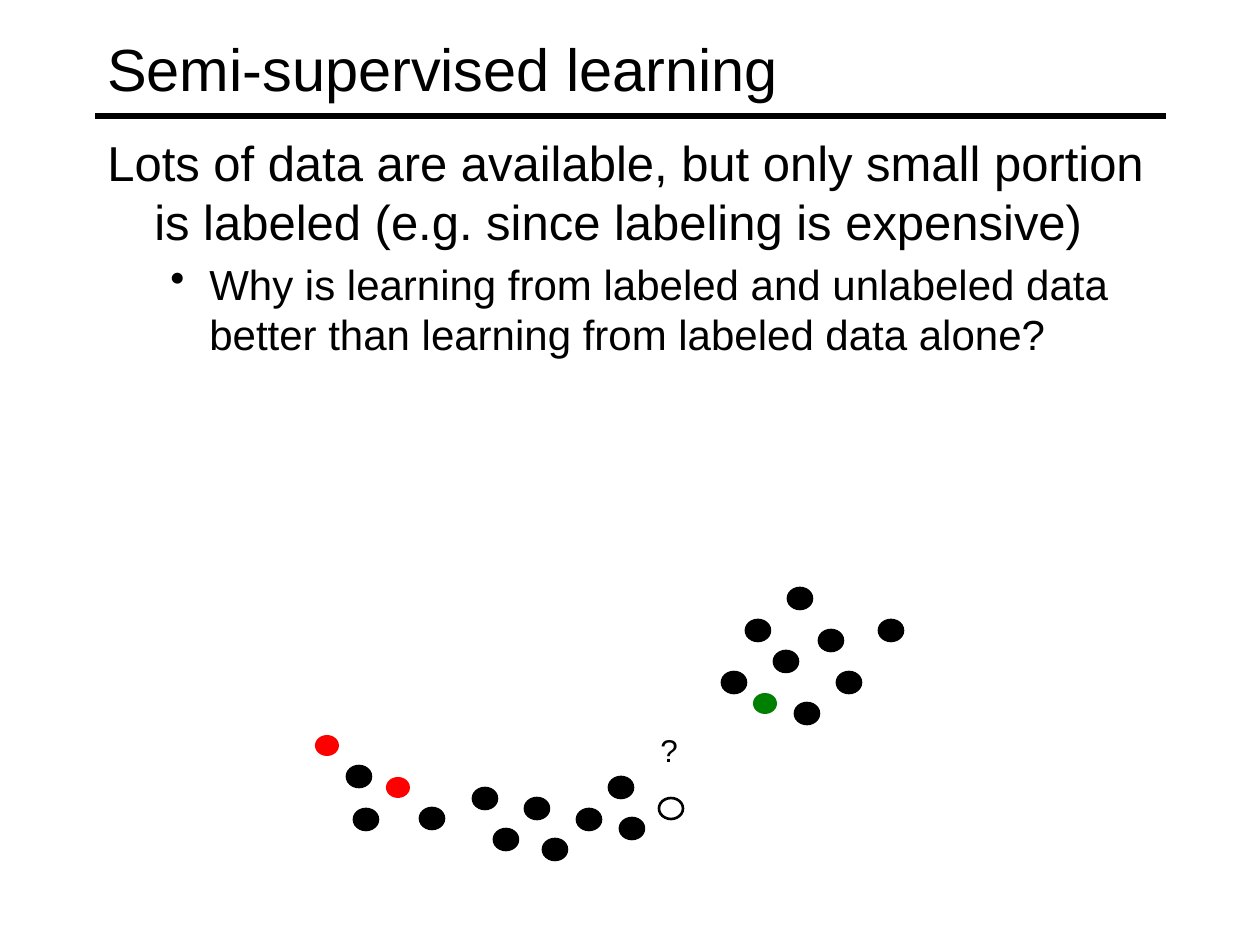
from dataclasses import dataclass

from lxml import etree
from pptx import Presentation, util as u
from pptx.dml.color import RGBColor
from pptx.enum import shapes, text
from pptx.oxml import ns

EMU_PER_PX = 914400 / 126
FONT = "Arial"
BLACK = RGBColor(0, 0, 0)
RED = RGBColor(255, 0, 0)
GREEN = RGBColor(0, 128, 0)
DOT_WIDTH, DOT_HEIGHT = 24, 21


@dataclass(frozen=True)
class Dot:
    left: int
    top: int
    fill: RGBColor | None = BLACK
    outlined: bool = True


@dataclass(frozen=True)
class TextBlock:
    left: int
    top: int
    width: int
    height: int
    wrap: bool = True
    anchor: text.MSO_ANCHOR = text.MSO_ANCHOR.TOP


@dataclass(frozen=True)
class Line:
    wording: str
    size: int
    margin: int = 0
    indent: int = 0
    level: int = 0
    space_before: float = 0
    bullet: str = ""


TITLE = TextBlock(95, 10, 1071, 116, anchor=text.MSO_ANCHOR.MIDDLE)
BODY = TextBlock(95, 126, 1071, 725)
QUESTION = TextBlock(648, 725, 55, 72, wrap=False)
BODY_LINES = [
    Line("Lots of data are available, but only small portion is labeled "
         "(e.g. since labeling is expensive)", 28, 47, -47, space_before=5.6),
    Line("Why is learning from labeled and unlabeled data better than learning "
         "from labeled data alone?", 24, 102, -39, 1, 4.8, "•"),
]

LABELED = [
    Dot(386, 777, RED, False),
    Dot(315, 735, RED, False),
    Dot(753, 693, GREEN, False),
]
QUERY = Dot(659, 798, None)
LOWER_CLUSTER = [
    (347, 766), (354, 809), (420, 808), (473, 788), (494, 829),
    (525, 798), (543, 839), (577, 809), (609, 777), (620, 818),
]
UPPER_CLUSTER = [
    (722, 672), (795, 703), (774, 651), (837, 672),
    (746, 620), (819, 630), (788, 588), (879, 620),
]


def px(length: int) -> u.Emu:
    return u.Emu(round(length * EMU_PER_PX))


def add_text(slide, block: TextBlock, lines: list[Line]) -> None:
    shape = slide.shapes.add_textbox(
        px(block.left), px(block.top), px(block.width), px(block.height))
    frame = shape.text_frame
    frame.word_wrap = block.wrap
    frame.vertical_anchor = block.anchor
    frame.text = "\n".join(line.wording for line in lines)
    for paragraph, line in zip(frame.paragraphs, lines):
        paragraph.level = line.level
        paragraph.space_before = u.Pt(line.space_before)
        font = paragraph.runs[0].font
        font.name = FONT
        font.size = u.Pt(line.size)
        font.color.rgb = BLACK
        properties = paragraph._p.get_or_add_pPr()
        properties.set("marL", str(px(line.margin)))
        properties.set("indent", str(px(line.indent)))
        if line.bullet:
            bullet = etree.SubElement(properties, ns.qn("a:buChar"))
            bullet.set("char", line.bullet)
        else:
            etree.SubElement(properties, ns.qn("a:buNone"))


def add_dot(slide, dot: Dot) -> None:
    shape = slide.shapes.add_shape(
        shapes.MSO_SHAPE.OVAL,
        px(dot.left), px(dot.top), px(DOT_WIDTH), px(DOT_HEIGHT))
    shape.shadow.inherit = False
    if dot.fill is None:
        shape.fill.background()
    else:
        shape.fill.solid()
        shape.fill.fore_color.rgb = dot.fill
    if dot.outlined:
        shape.line.color.rgb = BLACK
        shape.line.width = u.Pt(1.5)
    else:
        shape.line.fill.background()


def add_title_rule(slide) -> None:
    rule = slide.shapes.add_connector(
        shapes.MSO_CONNECTOR.STRAIGHT, px(95), px(116), px(1166), px(116))
    rule.line.color.rgb = BLACK
    rule.line.width = u.Pt(3)
    etree.SubElement(rule._element.spPr, ns.qn("a:effectLst"))


def main() -> None:
    presentation = Presentation()
    presentation.slide_width = px(1260)
    presentation.slide_height = px(945)
    slide = presentation.slides.add_slide(presentation.slide_layouts[6])

    add_title_rule(slide)
    add_text(slide, TITLE, [Line("Semi-supervised learning", 34)])
    add_text(slide, BODY, BODY_LINES)
    for dot in [*LABELED, QUERY]:
        add_dot(slide, dot)
    add_text(slide, QUESTION, [Line("?", 18)])
    for left, top in LOWER_CLUSTER + UPPER_CLUSTER:
        add_dot(slide, Dot(left, top))

    presentation.save("out.pptx")


if __name__ == "__main__":
    main()
